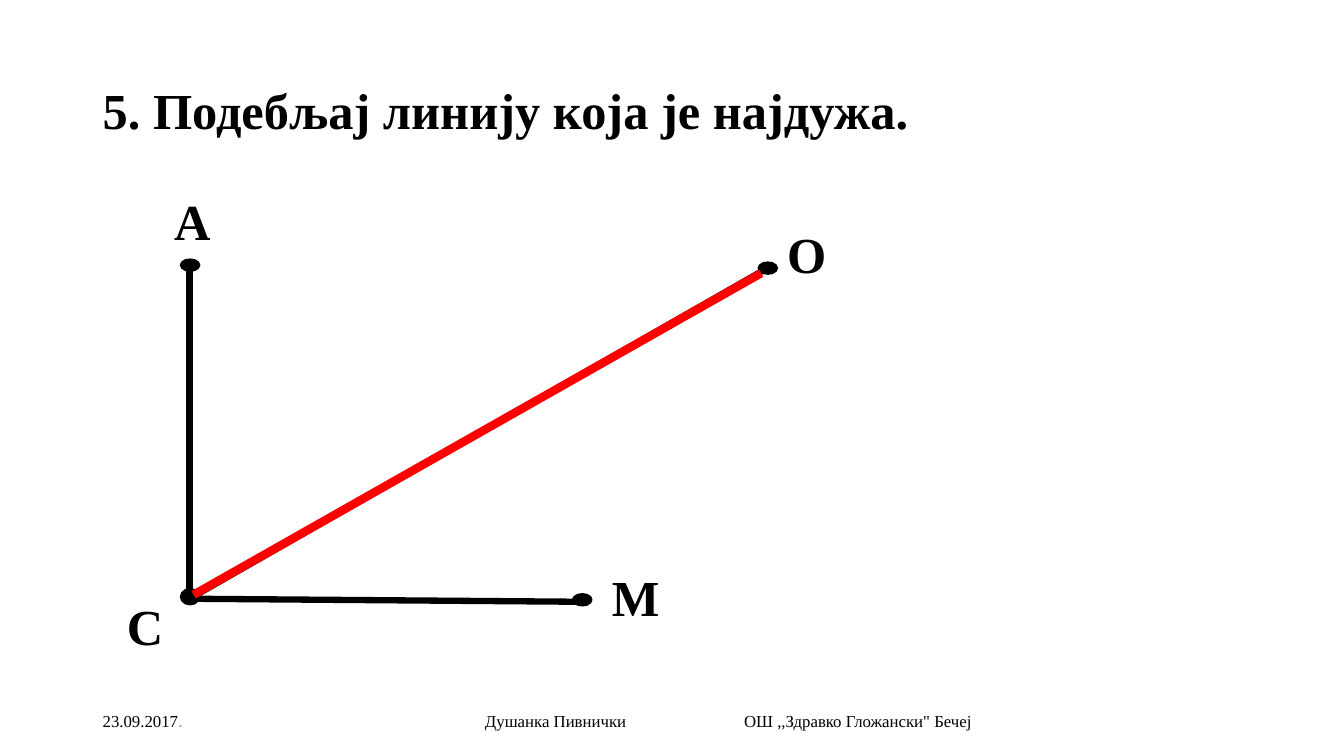
from lxml.etree import SubElement
from pptx import Presentation
from pptx.dml.color import RGBColor
from pptx.enum.shapes import MSO_CONNECTOR, MSO_SHAPE
from pptx.enum.text import MSO_ANCHOR
from pptx.oxml.ns import qn
from pptx.util import Inches, Pt

COLORS = {"ink": "000000", "longest": "FF0000", "muted": "8C8C8C"}
SERIF = "Times New Roman"
POINT_A, POINT_C, POINT_M, POINT_O = (1.88, 2.66), (1.88, 5.94), (5.73, 5.97), (7.61, 2.66)


def add_box(page, left, top, width, height, anchor=MSO_ANCHOR.TOP):
    """Add a wrapping text box and return its text frame."""
    box = page.shapes.add_textbox(Inches(left), Inches(top), Inches(width), Inches(height))
    box.text_frame.word_wrap = True
    box.text_frame.vertical_anchor = anchor
    return box.text_frame


def add_span(para, text, size, color="ink", font=SERIF, bold=False):
    """Add one formatted run to a paragraph."""
    span = para.add_run()
    span.text = text
    span.font.size = Pt(size)
    span.font.name = font
    span.font.bold = bold
    span.font.color.rgb = RGBColor.from_string(COLORS[color])


def add_heading(page, text, left, top, width, height, spacing=0.9, anchor=MSO_ANCHOR.TOP):
    """Add large bold text, used for the title and the point labels."""
    para = add_box(page, left, top, width, height, anchor).paragraphs[0]
    para.line_spacing = spacing
    add_span(para, text, 36, bold=True)


def add_segment(page, start, end, color="ink", weight=4.5):
    """Draw a straight line between two points."""
    line = page.shapes.add_connector(
        MSO_CONNECTOR.STRAIGHT, *(Inches(value) for value in (*start, *end)))
    line.line.color.rgb = RGBColor.from_string(COLORS[color])
    line.line.width = Pt(weight)
    SubElement(line._element.spPr, qn("a:effectLst"))


def add_dot(page, left, top, height=0.12):
    """Draw the black dot that marks a point."""
    dot = page.shapes.add_shape(
        MSO_SHAPE.OVAL, Inches(left), Inches(top), Inches(0.19), Inches(height))
    dot.shadow.inherit = False
    dot.fill.solid()
    dot.fill.fore_color.rgb = RGBColor.from_string(COLORS["ink"])
    dot.line.color.rgb = RGBColor.from_string(COLORS["ink"])
    dot.line.width = Pt(1)


def add_footer(page):
    """Add the date, and the author and school parted by a tab stop."""
    date = add_box(page, 0.92, 6.95, 3, 0.4, MSO_ANCHOR.MIDDLE).paragraphs[0]
    add_span(date, "23.09.2017", 12)
    add_span(date, ".", 12, "muted", "Calibri")
    frame = add_box(page, 4.42, 6.95, 5.63, 0.4, MSO_ANCHOR.MIDDLE)
    frame.margin_left = Inches(0.39)
    credit = frame.paragraphs[0]
    stops = SubElement(credit._p.get_or_add_pPr(), qn("a:tabLst"))
    SubElement(stops, qn("a:tab"), pos=str(Inches(2.57)), algn="l")
    add_span(credit, "Душанка Пивнички\t", 12)
    add_span(credit, "ОШ ,,Здравко Гложански\" Бечеј", 12)


def main():
    """Build the slide and save it."""
    deck = Presentation()
    deck.slide_width, deck.slide_height = Inches(13.33), Inches(7.5)
    page = deck.slides.add_slide(deck.slide_layouts[6])
    add_heading(page, "5. Подебљај линију која је најдужа.", 0.92, 0.4, 11.5, 1.45,
                anchor=MSO_ANCHOR.MIDDLE)
    add_footer(page)
    for end in (POINT_M, POINT_A, POINT_O):
        add_segment(page, POINT_C, end)
    add_dot(page, 1.79, 2.57)
    add_dot(page, 1.79, 5.84, 0.16)
    add_dot(page, 7.52, 2.6)
    add_dot(page, 5.68, 5.89)
    for text, left, top in (("A", 1.63, 1.91), ("M", 5.97, 5.64), ("О", 7.71, 2.23)):
        add_heading(page, text, left, top, 0.7, 0.5)
    add_heading(page, "С", 1.16, 5.85, 0.58, 0.71, spacing=1.0)
    add_segment(page, (1.92, 5.9), (7.55, 2.71), "longest", 6)
    deck.save("out.pptx")


if __name__ == "__main__":
    main()
